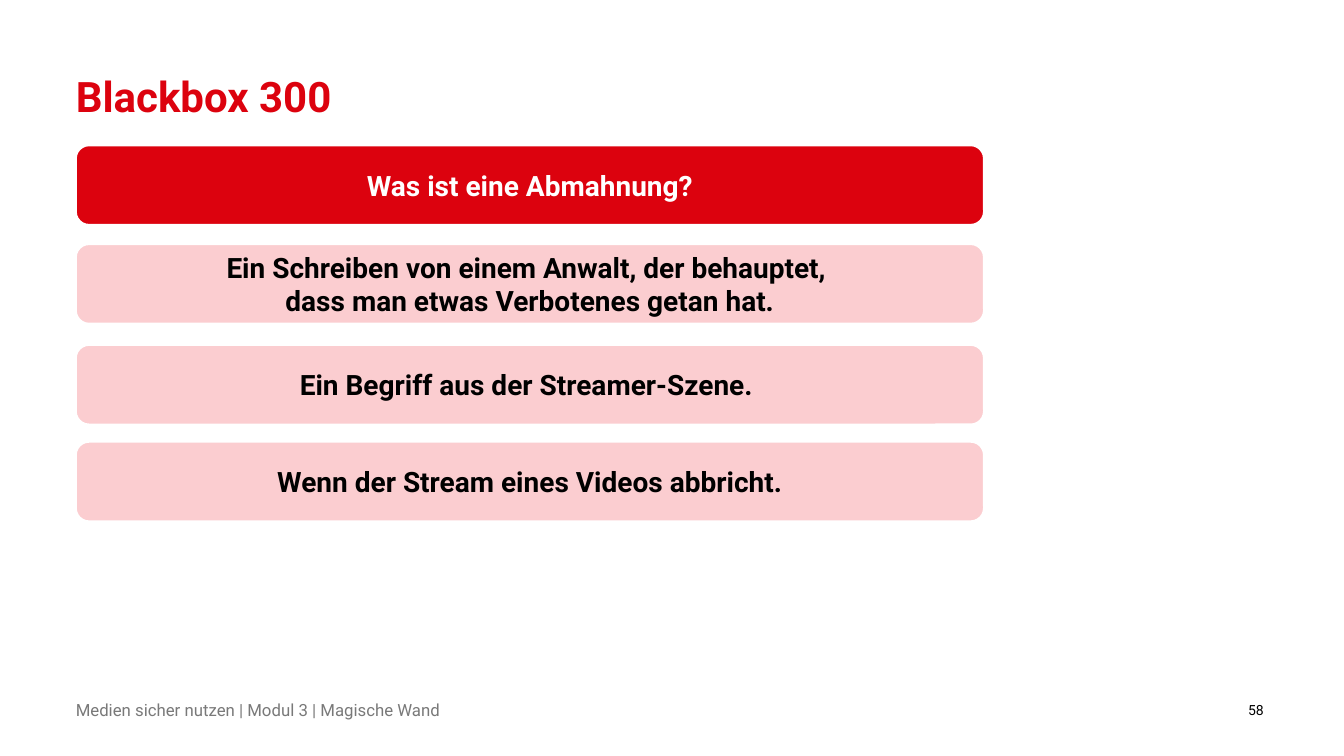
import pptx
import pptx.util
import pptx.dml.color
import pptx.enum.shapes
import pptx.enum.text
import lxml.etree

Cm = pptx.util.Cm
Pt = pptx.util.Pt
ALIGN = pptx.enum.text.PP_ALIGN
MIDDLE = pptx.enum.text.MSO_ANCHOR.MIDDLE
TOP = pptx.enum.text.MSO_ANCHOR.TOP

# Content
TITLE = "Blackbox 300"
FOOTER = "Medien sicher nutzen | Modul 3 | Magische Wand"
NUMBER = "58"
# text, top in cm, fill, opacity in percent, text colour
BOXES = [
    ("Was ist eine Abmahnung?", 3.66, "red", 100, "white"),
    ("Ein Schreiben von einem Anwalt, der behauptet, \n"
     "dass man etwas Verbotenes getan hat.", 6.15, "pink", 80, "black"),
    ("Ein Begriff aus der Streamer-Szene. ", 8.69, "pink", 80, "black"),
    ("Wenn der Stream eines Videos abbricht.", 11.13, "pink", 80, "black"),
]

# Look
COLORS = {"red": "DC020E", "pink": "FBC1C5", "white": "FFFFFF",
          "black": "000000", "gray": "797979"}
FONT = "Roboto"
LEFT, WIDTH, HEIGHT = 1.91, 22.89, 2.01


def color(name):
    return pptx.dml.color.RGBColor.from_string(COLORS[name])


def write(frame, text, size, tint, bold=False, align=ALIGN.LEFT, anchor=MIDDLE):
    frame.word_wrap = True
    frame.vertical_anchor = anchor
    para = frame.paragraphs[0]
    para.text = text
    para.alignment = align
    font = para.font
    font.name, font.size, font.bold = FONT, Pt(size), bold
    font.color.rgb = color(tint)
    return para


def label(left, top, width, height, *args, **style):
    box = slide.shapes.add_textbox(Cm(left), Cm(top), Cm(width), Cm(height))
    frame = box.text_frame
    frame.margin_left = frame.margin_right = 0
    frame.margin_top = frame.margin_bottom = 0
    return write(frame, *args, **style)


def fade(shape, percent):
    tone = shape.fill.fore_color
    tone = shape.element.spPr.find(pptx.oxml.ns.qn("a:solidFill"))[0]
    alpha = lxml.etree.SubElement(tone, pptx.oxml.ns.qn("a:alpha"))
    alpha.set("val", str(percent * 1000))


deck = pptx.Presentation()
deck.slide_width, deck.slide_height = Cm(33.87), Cm(19.05)
slide = deck.slides.add_slide(deck.slide_layouts[6])

# Title
head = label(LEFT, 1.91, 30, 1.17, TITLE, 30, "red", bold=True, anchor=TOP)
head.line_spacing = 0.9

# Footer and page number
label(LEFT, 17.68, 25, 0.41, FOOTER, 12, "gray")
label(30.07, 17.68, 1.78, 0.41, NUMBER, 10, "black", align=ALIGN.RIGHT)

# Question and answers
for text, top, fill, solid, tint in BOXES:
    box = slide.shapes.add_shape(
        pptx.enum.shapes.MSO_SHAPE.ROUNDED_RECTANGLE,
        Cm(LEFT), Cm(top), Cm(WIDTH), Cm(HEIGHT))
    box.shadow.inherit = False
    box.fill.solid()
    box.fill.fore_color.rgb = color(fill)
    if solid < 100:
        fade(box, solid)
    box.line.color.rgb = color("white")
    box.line.width = Pt(1.5)
    write(box.text_frame, text, 20, tint, bold=True, align=ALIGN.CENTER)

deck.save("out.pptx")
